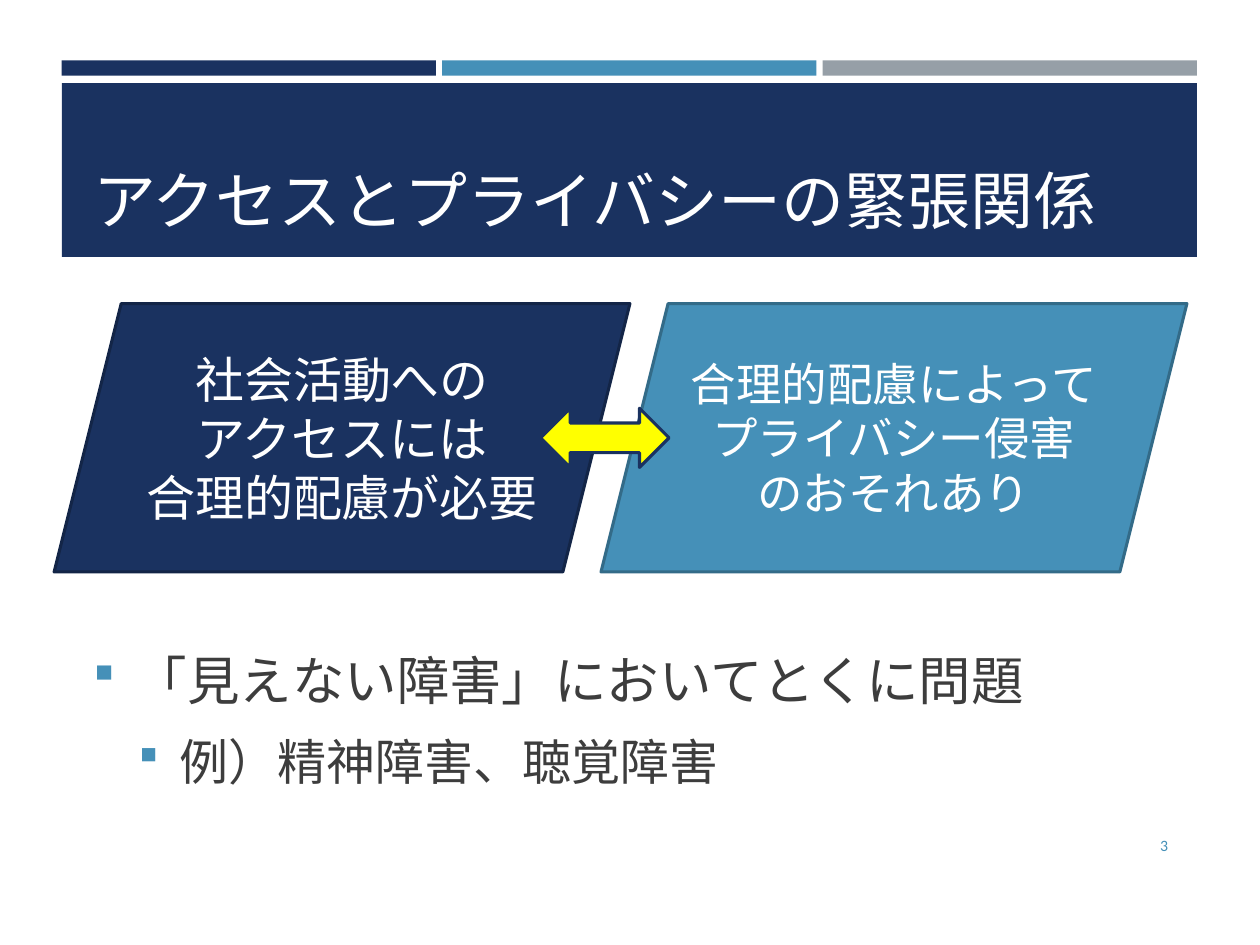
"""Build the slide on the tension between access and privacy."""
from dataclasses import dataclass

from lxml.etree import SubElement
from pptx import Presentation
from pptx.dml.color import RGBColor
from pptx.enum.shapes import MSO_SHAPE
from pptx.enum.text import MSO_ANCHOR, PP_ALIGN
from pptx.oxml.ns import qn
from pptx.util import Inches, Pt


@dataclass(frozen=True)
class Theme:
    font: str = "Calibri"
    navy: str = "1A3260"
    navy_edge: str = "132547"
    blue: str = "4590B8"
    blue_edge: str = "336B88"
    gray: str = "969FA7"
    yellow: str = "FFFF00"
    white: str = "FFFFFF"
    ink: str = "3D3D3D"
    title: int = 36
    point: int = 30
    example: int = 28
    access: int = 28
    privacy: int = 26
    number: int = 9
    edge_width: float = 1.75


theme = Theme()
prs = Presentation()
prs.slide_width, prs.slide_height = Inches(10), Inches(7.5)
slide = prs.slides.add_slide(prs.slide_layouts[6])


def add_block(kind, box, fill, edge=None):
    block = slide.shapes.add_shape(kind, *map(Inches, box))
    block.shadow.inherit = False
    block.fill.solid()
    block.fill.fore_color.rgb = RGBColor.from_string(fill)
    if edge:
        block.line.color.rgb = RGBColor.from_string(edge)
        block.line.width = Pt(theme.edge_width)
    else:
        block.line.fill.background()
    return block


def write(frame, lines, color, align, anchor):
    frame.word_wrap = True
    frame.vertical_anchor = anchor
    for index, (text, size) in enumerate(lines):
        paragraph = frame.add_paragraph() if index else frame.paragraphs[0]
        paragraph.alignment = align
        run = paragraph.add_run()
        run.text = text
        run.font.name = theme.font
        run.font.size = Pt(size)
        run.font.color.rgb = RGBColor.from_string(color)


for column, color in enumerate((theme.navy, theme.blue, theme.gray)):
    add_block(MSO_SHAPE.RECTANGLE, (0.49 + 3.02 * column, 0.48, 2.97, 0.12), color)
add_block(MSO_SHAPE.RECTANGLE, (0.49, 0.66, 9.01, 1.38), theme.navy)

title = slide.shapes.add_textbox(Inches(0.64), Inches(0.75), Inches(8.74), Inches(1.18))
write(title.text_frame, [("アクセスとプライバシーの緊張関係", theme.title)],
      theme.white, PP_ALIGN.LEFT, MSO_ANCHOR.BOTTOM)

points = slide.shapes.add_textbox(Inches(0.64), Inches(5.09), Inches(8.74), Inches(1.32))
write(points.text_frame,
      [("「見えない障害」においてとくに問題", theme.point), ("例）精神障害、聴覚障害", theme.example)],
      theme.ink, PP_ALIGN.LEFT, MSO_ANCHOR.TOP)
for level, (paragraph, indent) in enumerate(zip(points.text_frame.paragraphs, (0.33, 0.69))):
    paragraph.level = level
    paragraph.space_before = Pt(6)
    paragraph.space_after = Pt(6)
    properties = paragraph._p.get_or_add_pPr()
    properties.set("marL", str(Inches(indent)))
    properties.set("indent", str(Inches(-0.33)))
    bullet_color = SubElement(properties, qn("a:buClr"))
    SubElement(bullet_color, qn("a:srgbClr"), val=theme.blue)
    SubElement(properties, qn("a:buSzPct"), val="92000")
    SubElement(properties, qn("a:buFont"), typeface="Wingdings", charset="2")
    SubElement(properties, qn("a:buChar"), char="§")

number = slide.shapes.add_textbox(Inches(8.53), Inches(6.51), Inches(0.84), Inches(0.4))
write(number.text_frame, [("3", theme.number)], theme.blue, PP_ALIGN.RIGHT, MSO_ANCHOR.MIDDLE)

sides = (
    (0.43, 4.57, theme.navy, theme.navy_edge, theme.access,
     ("社会活動への", "アクセスには", "合理的配慮が必要")),
    (4.77, 4.65, theme.blue, theme.blue_edge, theme.privacy,
     ("合理的配慮によってプライバシー侵害", "のおそれあり")),
)
for left, width, fill, edge, size, lines in sides:
    side = add_block(MSO_SHAPE.PARALLELOGRAM, (left, 2.41, width, 2.13), fill, edge)
    side.text_frame.margin_left = side.text_frame.margin_right = 0
    write(side.text_frame, [(line, size) for line in lines],
          theme.white, PP_ALIGN.CENTER, MSO_ANCHOR.MIDDLE)

add_block(MSO_SHAPE.LEFT_RIGHT_ARROW, (4.29, 3.24, 1.02, 0.47), theme.yellow, theme.navy)

prs.save("out.pptx")
